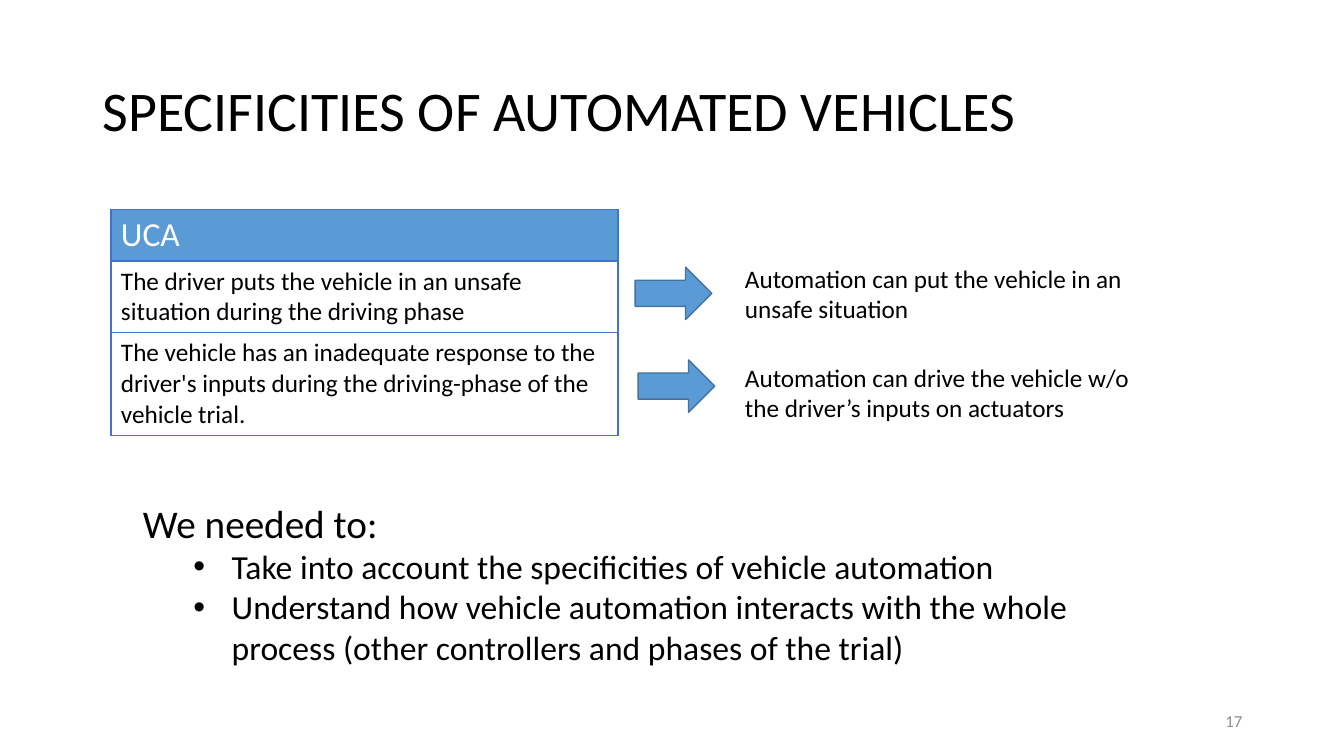
"""Build the slide on the specificities of automated vehicles."""
import lxml.etree
import pptx
import pptx.dml.color
import pptx.enum.shapes
import pptx.enum.text
import pptx.oxml.ns
import pptx.util

Inches = pptx.util.Inches
Pt = pptx.util.Pt
Anchor = pptx.enum.text.MSO_ANCHOR
Align = pptx.enum.text.PP_ALIGN


def color(value):
    return pptx.dml.color.RGBColor.from_string(value)


def add_element(parent, tag, **attributes):
    element = lxml.etree.SubElement(parent, pptx.oxml.ns.qn(tag))
    for name, value in attributes.items():
        element.set(name, str(value))
    return element


def write(para, text, size=18, ink="000000", font="Calibri", align=Align.LEFT,
          spacing=None, bullet=False):
    if bullet:
        para.level = 1
        properties = para._p.get_or_add_pPr()
        properties.set("marL", str(Inches(0.88)))
        properties.set("indent", str(Inches(-0.38)))
        add_element(properties, "a:buFont", typeface="Arial")
        add_element(properties, "a:buChar", char="•")
    para.alignment = align
    if spacing:
        para.line_spacing = spacing
    span = para.add_run()
    span.text = text
    span.font.size = Pt(size)
    span.font.name = font
    span.font.color.rgb = color(ink)


class SlideBuilder:
    accent = "5B9BD5"
    arrow_edge = "43739E"
    border = "4472C4"

    def __init__(self, page):
        self.page = page

    def text(self, left, top, width, height, lines, anchor=Anchor.TOP):
        box = self.page.shapes.add_textbox(
            Inches(left), Inches(top), Inches(width), Inches(height))
        frame = box.text_frame
        frame.word_wrap = True
        frame.vertical_anchor = anchor
        for index, (content, style) in enumerate(lines):
            para = frame.add_paragraph() if index else frame.paragraphs[0]
            write(para, content, **style)

    def arrow(self, left, top):
        arrow = self.page.shapes.add_shape(
            pptx.enum.shapes.MSO_SHAPE.RIGHT_ARROW,
            Inches(left), Inches(top), Inches(0.76), Inches(0.52))
        arrow.shadow.inherit = False
        arrow.fill.solid()
        arrow.fill.fore_color.rgb = color(self.accent)
        arrow.line.color.rgb = color(self.arrow_edge)
        arrow.line.width = Pt(1)

    def table(self, left, top, width, rows):
        height = sum(row_height for row_height, _ in rows)
        table = self.page.shapes.add_table(
            len(rows), 1, Inches(left), Inches(top), Inches(width), Inches(height)).table
        table.horz_banding = False
        for index, (row_height, content) in enumerate(rows):
            table.rows[index].height = Inches(row_height)
            cell = table.cell(index, 0)
            header = index == 0
            write(cell.text_frame.paragraphs[0], content,
                  size=24 if header else 18, ink="FFFFFF" if header else "000000")
            self.outline(cell)
            if header:
                cell.fill.solid()
                cell.fill.fore_color.rgb = color(self.accent)
            else:
                cell.fill.background()

    def outline(self, cell):
        properties = cell._tc.get_or_add_tcPr()
        for side in ("a:lnL", "a:lnR", "a:lnT", "a:lnB"):
            line = add_element(properties, side, w=Pt(1))
            add_element(add_element(line, "a:solidFill"), "a:srgbClr", val=self.border)


def main():
    deck = pptx.Presentation()
    deck.slide_width = Inches(13.33)
    deck.slide_height = Inches(7.5)
    slide = SlideBuilder(deck.slides.add_slide(deck.slide_layouts[6]))

    slide.text(0.92, 0.4, 11.5, 1.45, [
        ("SPECIFICITIES OF AUTOMATED VEHICLES", {"size": 40, "spacing": 0.9}),
    ], anchor=Anchor.MIDDLE)
    slide.table(1.1, 2.08, 5.03, [
        (0.51, "UCA"),
        (0.71, "The driver puts the vehicle in an unsafe situation during the driving phase"),
        (1.02, "The vehicle has an inadequate response to the driver's inputs "
               "during the driving-phase of the vehicle trial."),
    ])
    for top, finding in (
        (2.56, "Automation can put the vehicle in an unsafe situation"),
        (3.54, "Automation can drive the vehicle w/o the driver’s inputs on actuators"),
    ):
        slide.text(7.29, top, 4.15, 0.71, [(finding, {})])
    for left, top in ((6.3, 2.65), (6.33, 3.57)):
        slide.arrow(left, top)
    need = {"size": 24, "bullet": True}
    slide.text(1.32, 4.9, 10.34, 1.78, [
        ("We needed to:", {"size": 28}),
        ("Take into account the specificities of vehicle automation", need),
        ("Understand how vehicle automation interacts with the whole process "
         "(other controllers and phases of the trial)", need),
    ])
    slide.text(9.42, 6.95, 3, 0.4, [
        ("17", {"size": 12, "ink": "8C8C8C", "align": Align.RIGHT}),
    ], anchor=Anchor.MIDDLE)
    deck.save("out.pptx")


if __name__ == "__main__":
    main()
